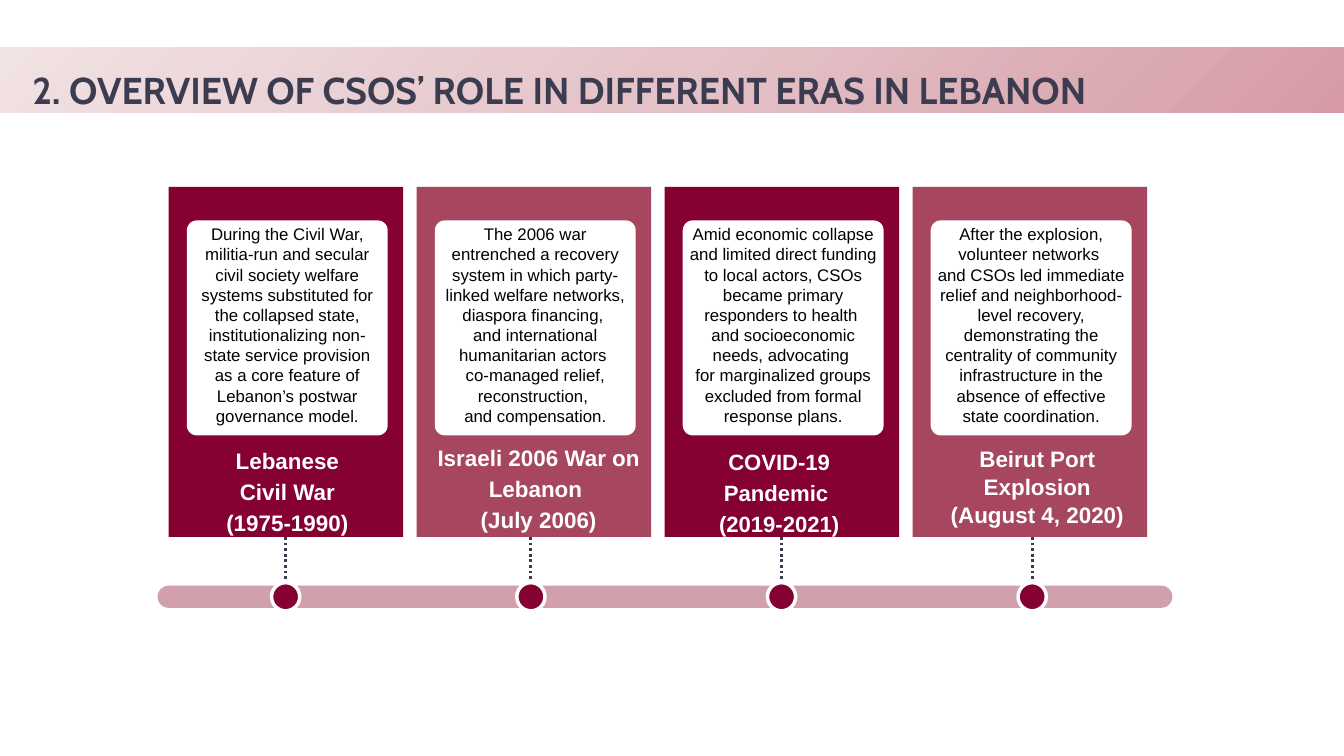
"""Build the timeline slide on the role of CSOs in four eras of Lebanon."""
from dataclasses import dataclass

from lxml import etree
from pptx import Presentation
from pptx.dml.color import RGBColor
from pptx.enum.dml import MSO_LINE
from pptx.enum.shapes import MSO_CONNECTOR, MSO_SHAPE
from pptx.enum.text import MSO_ANCHOR, MSO_AUTO_SIZE, PP_ALIGN
from pptx.oxml import parse_xml
from pptx.oxml.ns import qn
from pptx.util import Inches, Length, Pt

RECTANGLE = MSO_SHAPE.RECTANGLE
ROUNDED = MSO_SHAPE.ROUNDED_RECTANGLE
OVAL = MSO_SHAPE.OVAL
STRAIGHT = MSO_CONNECTOR.STRAIGHT
DOTTED = MSO_LINE.ROUND_DOT
TOP = MSO_ANCHOR.TOP
NO_FIT = MSO_AUTO_SIZE.NONE
LEFT, CENTER = PP_ALIGN.LEFT, PP_ALIGN.CENTER

COLUMNS, ROWS = 20, 11.25
CELL = Inches(1)
FIRST_CARD, CARD_STEP = 2.51, 3.69
CARD_TOP, CARD_WIDTH, CARD_HEIGHT = 2.78, 3.49, 5.21
CARD_BOTTOM = CARD_TOP + CARD_HEIGHT
PANEL_INDENT, PANEL_TOP, PANEL_WIDTH, PANEL_HEIGHT = 0.27, 3.28, 2.99, 3.2
MARKER_SIZE = 0.42
AXIS_ROW = 8.88
WINE, ROSE, SLATE, WHITE, BLACK = "840132", "A7465F", "3C3C50", "FFFFFF", "000000"
BAND_STOPS = ((0, "D69BA6"), (50, "E4C3C8"), (100, "F1E2E4"))


@dataclass(frozen=True)
class Area:
    """A rectangle in grid columns and rows."""
    left: float
    top: float
    width: float
    height: float

    def lengths(self) -> tuple:
        """Return the four sides as slide lengths."""
        return tuple(cells(n) for n in (self.left, self.top, self.width, self.height))


@dataclass(frozen=True)
class Era:
    """One card with its caption and its marker on the timeline."""
    story: tuple
    caption: tuple
    caption_area: Area
    color: str
    marker: float
    size: float = 24
    spacing: float = 33.2


ERAS = (
    Era(("During the Civil War, militia-run and secular civil society welfare systems "
         "substituted for the collapsed state, institutionalizing non-state service "
         "provision as a core feature of Lebanon’s postwar governance model.",),
        ("Lebanese Civil War (1975-1990)",),
        Area(3.19, 6.59, 2.17, 1.37), WINE, 4.25),
    Era(("The 2006 war entrenched a recovery system in which party-linked welfare "
         "networks, diaspora financing, ",
         "and international humanitarian actors ",
         "co-managed relief, reconstruction, ",
         "and compensation."),
        ("Israeli 2006 War on Lebanon ", "(July 2006)"),
        Area(6.35, 6.55, 3.33, 1.37), ROSE, 7.9),
    Era(("Amid economic collapse and limited direct funding to local actors, CSOs "
         "became primary responders to health ",
         "and socioeconomic needs, advocating ",
         "for marginalized groups excluded from formal response plans."),
        ("COVID-19 Pandemic ", "(2019-2021)"),
        Area(10.18, 6.61, 2.83, 1.36), WINE, 11.63, size=23.7),
    Era(("After the explosion, volunteer networks ",
         "and CSOs led immediate relief and neighborhood-level recovery, demonstrating "
         "the centrality of community infrastructure in the absence of effective state "
         "coordination."),
        ("Beirut Port Explosion (August 4, 2020)",),
        Area(14.05, 6.6, 2.77, 1.25), ROSE, 15.36, spacing=30.3),
)


def cells(count: float) -> Length:
    """Turn a number of grid cells into a slide length."""
    return Length(round(count * CELL))


def color(value: str) -> RGBColor:
    """Read a hex string as a colour."""
    return RGBColor.from_string(value)


def write(box, paragraphs: tuple, *, size: float, fill: str, font: str = "Arial",
          bold: bool = False, align=CENTER, spacing: float = 0,
          margins: tuple = (0, 0)) -> None:
    """Fill a shape with formatted paragraphs."""
    frame = box.text_frame
    frame.word_wrap = True
    frame.auto_size = NO_FIT
    frame.vertical_anchor = TOP
    frame.margin_left = frame.margin_right = cells(margins[0])
    frame.margin_top = frame.margin_bottom = cells(margins[1])
    for index, words in enumerate(paragraphs):
        para = frame.add_paragraph() if index else frame.paragraphs[0]
        para.alignment = align
        if spacing:
            para.line_spacing = Pt(spacing)
        span = para.add_run()
        span.text = words
        span.font.name = font
        span.font.size = Pt(size)
        span.font.bold = bold
        span.font.color.rgb = color(fill)


def draw_shape(page, kind, area: Area, fill: str, outline: str = "", weight: float = 0):
    """Add a flat preset shape."""
    shape = page.shapes.add_shape(kind, *area.lengths())
    shape.shadow.inherit = False
    shape.fill.solid()
    shape.fill.fore_color.rgb = color(fill)
    if outline:
        shape.line.color.rgb = color(outline)
        shape.line.width = Pt(weight)
    else:
        shape.line.fill.background()
    return shape


def draw_line(page, start: tuple, end: tuple, stroke: str, weight: float):
    """Add a straight line without a shadow."""
    line = page.shapes.add_connector(STRAIGHT, *(cells(n) for n in start + end))
    line.line.color.rgb = color(stroke)
    line.line.width = Pt(weight)
    etree.SubElement(line.element.spPr, qn("a:effectLst"))
    return line


def draw_heading(page) -> None:
    """Place the title over its gradient band."""
    title = page.shapes.title
    title.left, title.top, title.width, title.height = Area(0.48, 0.73, 19.19, 0.85).lengths()
    write(title, ("2. OVERVIEW OF CSOS’ ROLE IN DIFFERENT ERAS IN LEBANON",), size=40,
          fill=SLATE, font="Cabin", bold=True, align=LEFT, spacing=67.2)
    band = draw_shape(page, RECTANGLE, Area(0, 0.7, COLUMNS, 0.98), WHITE)
    band.rotation = 180
    stops = "".join(f'<a:gs pos="{share * 1000}"><a:srgbClr val="{tint}"/></a:gs>'
                    for share, tint in BAND_STOPS)
    gradient = parse_xml(
        '<a:gradFill xmlns:a="http://schemas.openxmlformats.org/drawingml/2006/main" '
        f'rotWithShape="1"><a:gsLst>{stops}</a:gsLst><a:path path="circle">'
        '<a:fillToRect l="100000" t="100000"/></a:path></a:gradFill>')
    solid = band.element.spPr.find(qn("a:solidFill"))
    band.element.spPr.replace(solid, gradient)
    title.element.addprevious(band.element)


def draw_card(page, index: int, era: Era) -> None:
    """Add the card of an era with its story and caption."""
    left = FIRST_CARD + index * CARD_STEP
    draw_shape(page, RECTANGLE, Area(left, CARD_TOP, CARD_WIDTH, CARD_HEIGHT), era.color)
    panel = draw_shape(page, ROUNDED, Area(left + PANEL_INDENT, PANEL_TOP, PANEL_WIDTH,
                                           PANEL_HEIGHT), WHITE)
    panel.adjustments[0] = 0.05
    write(panel, era.story, size=18, fill=BLACK, margins=(0.05, 0.01))
    caption = page.shapes.add_textbox(*era.caption_area.lengths())
    write(caption, era.caption, size=era.size, fill=WHITE, bold=True, spacing=era.spacing)


def draw_axis(page) -> None:
    """Add the translucent round-ended bar of the timeline."""
    axis = draw_line(page, (FIRST_CARD, AXIS_ROW), (17.28, AXIS_ROW), ROSE, 24)
    stroke = axis.element.spPr.find(qn("a:ln"))
    stroke.set("cap", "rnd")
    etree.SubElement(stroke.find(".//" + qn("a:srgbClr")), qn("a:alpha"), val="51000")


def draw_marker(page, era: Era) -> None:
    """Join a card to its dot on the timeline."""
    stem = draw_line(page, (era.marker, CARD_BOTTOM), (era.marker, 8.67), SLATE, 3)
    stem.line.dash_style = DOTTED
    half = MARKER_SIZE / 2
    draw_shape(page, OVAL, Area(era.marker - half, AXIS_ROW - half, MARKER_SIZE, MARKER_SIZE),
               WINE, WHITE, 3.75)


def main() -> None:
    """Build and save the deck."""
    deck = Presentation()
    deck.slide_width, deck.slide_height = cells(COLUMNS), cells(ROWS)
    page = deck.slides.add_slide(deck.slide_layouts[5])
    draw_heading(page)
    for index, era in enumerate(ERAS):
        draw_card(page, index, era)
    draw_axis(page)
    for era in ERAS:
        draw_marker(page, era)
    deck.save("out.pptx")


if __name__ == "__main__":
    main()
